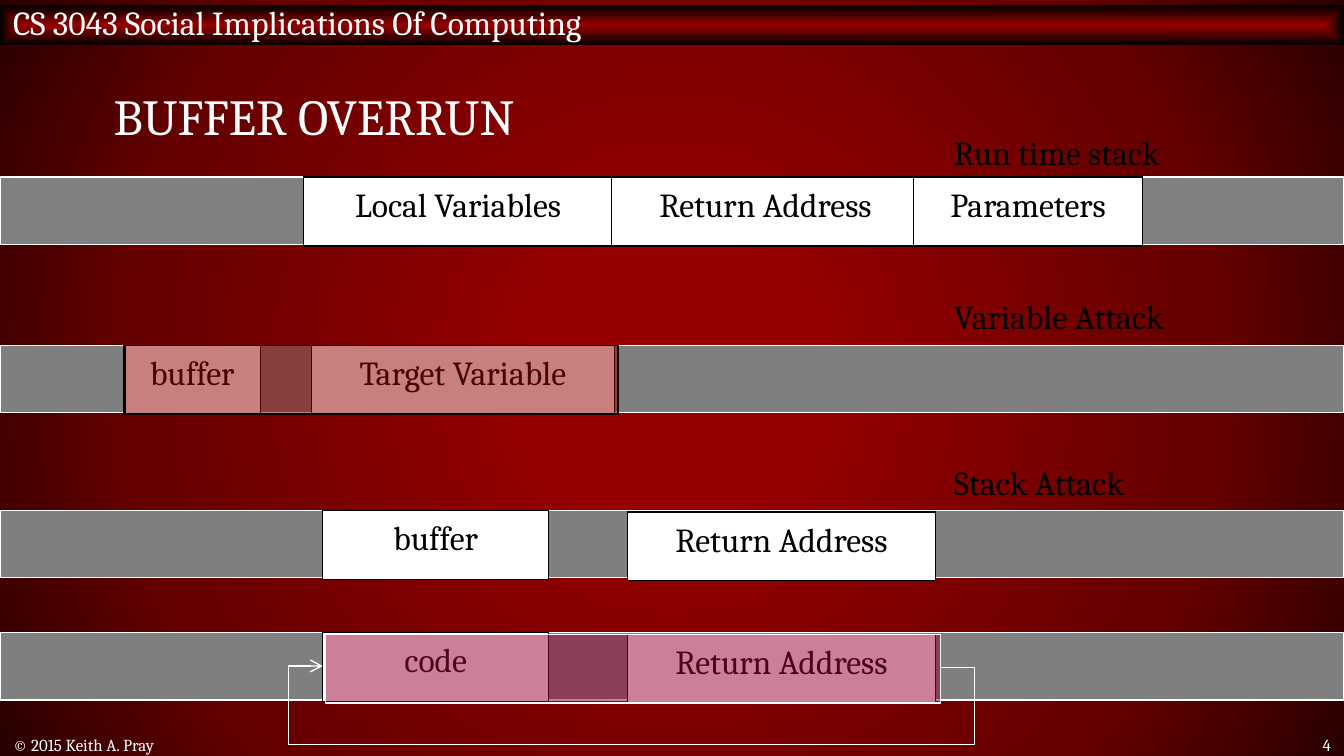
from lxml.etree import SubElement
from pptx import Presentation
from pptx.dml.color import RGBColor
from pptx.enum.shapes import MSO_CONNECTOR, MSO_SHAPE
from pptx.enum.text import MSO_ANCHOR, PP_ALIGN
from pptx.oxml.ns import qn
from pptx.util import Cm, Pt

WIDE, HIGH = 25.4, 14.29
BAR, BOX = 1.27, 1.3  # heights of a memory bar and of a cell in it
WHITE, BLACK, RED = "FFFFFF", "000000", "960000"

# Each row: top, grey, cells (left, width, drop, text), overlay (left, width, drop, fill, line)
ROWS = [
    (3.35, "808080", [(5.74, 5.84, 0, "Local Variables"),
                      (11.56, 5.82, 0, "Return Address"),
                      (17.27, 4.32, 0, "Parameters")], None),
    (6.53, "7F7F7F", [(2.34, 2.59, 0, "buffer"),
                      (5.89, 5.72, 0, "Target Variable")],
     (2.36, 9.32, 0, RED, BLACK)),
    (9.65, "7F7F7F", [(6.1, 4.27, 0, "buffer"),
                      (11.86, 5.82, 0.03, "Return Address")], None),
    (11.96, "7F7F7F", [(6.1, 4.27, 0, "code"),
                       (11.86, 5.82, 0.03, "Return Address")],
     (6.15, 11.63, 0.03, "990033", WHITE)),
]
LABELS = [(2.36, "Run time stack"), (5.46, "Variable Attack"), (8.61, "Stack Attack")]


def color(code):
    return RGBColor.from_string(code)


def shade(fill, root, path, stops):
    """Give a fill a gradient that spreads from the centre."""
    fill.gradient()
    grad = next(root.iter(qn("a:gradFill")))
    for child in list(grad):
        grad.remove(child)
    group = SubElement(grad, qn("a:gsLst"))
    for place, code in stops:
        stop = SubElement(group, qn("a:gs"), pos=str(place * 1000))
        SubElement(stop, qn("a:srgbClr"), val=code)
    way = SubElement(grad, qn("a:path"), path=path)
    SubElement(way, qn("a:fillToRect"), l="50000", t="50000", r="50000", b="50000")


def write(shape, text, size=18, ink=BLACK, align=PP_ALIGN.LEFT,
          anchor=MSO_ANCHOR.TOP, wrap=True, space=None):
    frame = shape.text_frame
    frame.word_wrap = wrap
    frame.vertical_anchor = anchor
    para = frame.paragraphs[0]
    para.alignment = align
    para.line_spacing = space
    run = para.add_run()
    run.text = text
    run.font.name = "Cambria"
    run.font.size = Pt(size)
    run.font.color.rgb = color(ink)


def label(slide, left, top, width, height, text, **form):
    box = slide.shapes.add_textbox(Cm(left), Cm(top), Cm(width), Cm(height))
    write(box, text, **form)


def block(slide, left, top, width, height, fill=None, line=None, alpha=None):
    shape = slide.shapes.add_shape(MSO_SHAPE.RECTANGLE, Cm(left), Cm(top),
                                   Cm(width), Cm(height))
    shape.shadow.inherit = False
    if fill:
        shape.fill.solid()
        shape.fill.fore_color.rgb = color(fill)
    if alpha:
        tint = next(shape.element.spPr.iter(qn("a:srgbClr")))
        SubElement(tint, qn("a:alpha"), val=str(alpha * 1000))
    if line:
        shape.line.color.rgb = color(line)
        shape.line.width = Pt(0.75)
    else:
        shape.line.fill.background()
    return shape


def header(slide):
    bar = block(slide, 0, 0.1, WIDE, 0.76)
    shade(bar.fill, bar.element, "shape", [(0, RED), (100, BLACK)])
    write(bar, "CS 3043 Social Implications Of Computing", ink=WHITE,
          anchor=MSO_ANCHOR.MIDDLE)
    bar.text_frame.margin_top = 0


def memory(slide, top, grey, cells, over):
    block(slide, 0, top, WIDE, BAR, grey, WHITE)
    for left, width, drop, text in cells:
        cell = block(slide, left, top + drop, width, BOX, WHITE, BLACK)
        write(cell, text, align=PP_ALIGN.CENTER, wrap=False)
    if over:
        left, width, drop, fill, line = over
        block(slide, left, top + drop, width, BOX, fill, line, alpha=50)


def loop(slide, start, end, out, low):
    """Arrow that leaves to the right, runs below and comes back from the left."""
    (x1, y1), (x2, y2) = start, end
    link = slide.shapes.add_connector(MSO_CONNECTOR.ELBOW, Cm(x1), Cm(y1),
                                      Cm(x2), Cm(y2))
    link.line.color.rgb = color(WHITE)
    link.line.width = Pt(0.75)
    props = link.element.spPr
    SubElement(props.find(qn("a:ln")), qn("a:tailEnd"), type="arrow")
    SubElement(props, qn("a:effectLst"))
    geom = props.find(qn("a:prstGeom"))
    geom.set("prst", "bentConnector5")
    guides = geom.find(qn("a:avLst"))
    side = out / (x1 - x2)
    bends = [-side, (low - y1) / (y2 - y1), 1 + side]
    for num, bend in enumerate(bends, 1):
        SubElement(guides, qn("a:gd"), name=f"adj{num}",
                   fmla=f"val {round(bend * 100000)}")


def main():
    deck = Presentation()
    deck.slide_width, deck.slide_height = Cm(WIDE), Cm(HIGH)
    slide = deck.slides.add_slide(deck.slide_layouts[6])
    shade(slide.background.fill, slide.element, "circle",
          [(17, RED), (71, "650000"), (100, "290000")])

    # Header, title and footer
    header(slide)
    middle = MSO_ANCHOR.MIDDLE
    label(slide, 1.9, 1.02, 21.6, 2.54, "BUFFER OVERRUN", size=27, ink=WHITE,
          anchor=middle, space=0.8)
    label(slide, 0, 13.87, 15.44, 0.41, "© 2015 Keith A. Pray", size=9,
          ink=WHITE, anchor=middle)
    label(slide, 23.67, 13.87, 1.73, 0.41, "4", size=9, ink=WHITE,
          anchor=middle, align=PP_ALIGN.RIGHT)

    # Memory rows, then the jump back into the code
    for row in ROWS:
        memory(slide, *row)
    loop(slide, (17.78, 12.62), (6.1, 12.59), 0.64, 14.07)

    # Row labels
    for top, text in LABELS:
        label(slide, 17.78, top, 7.62, BAR, text)

    deck.save("out.pptx")


if __name__ == "__main__":
    main()
